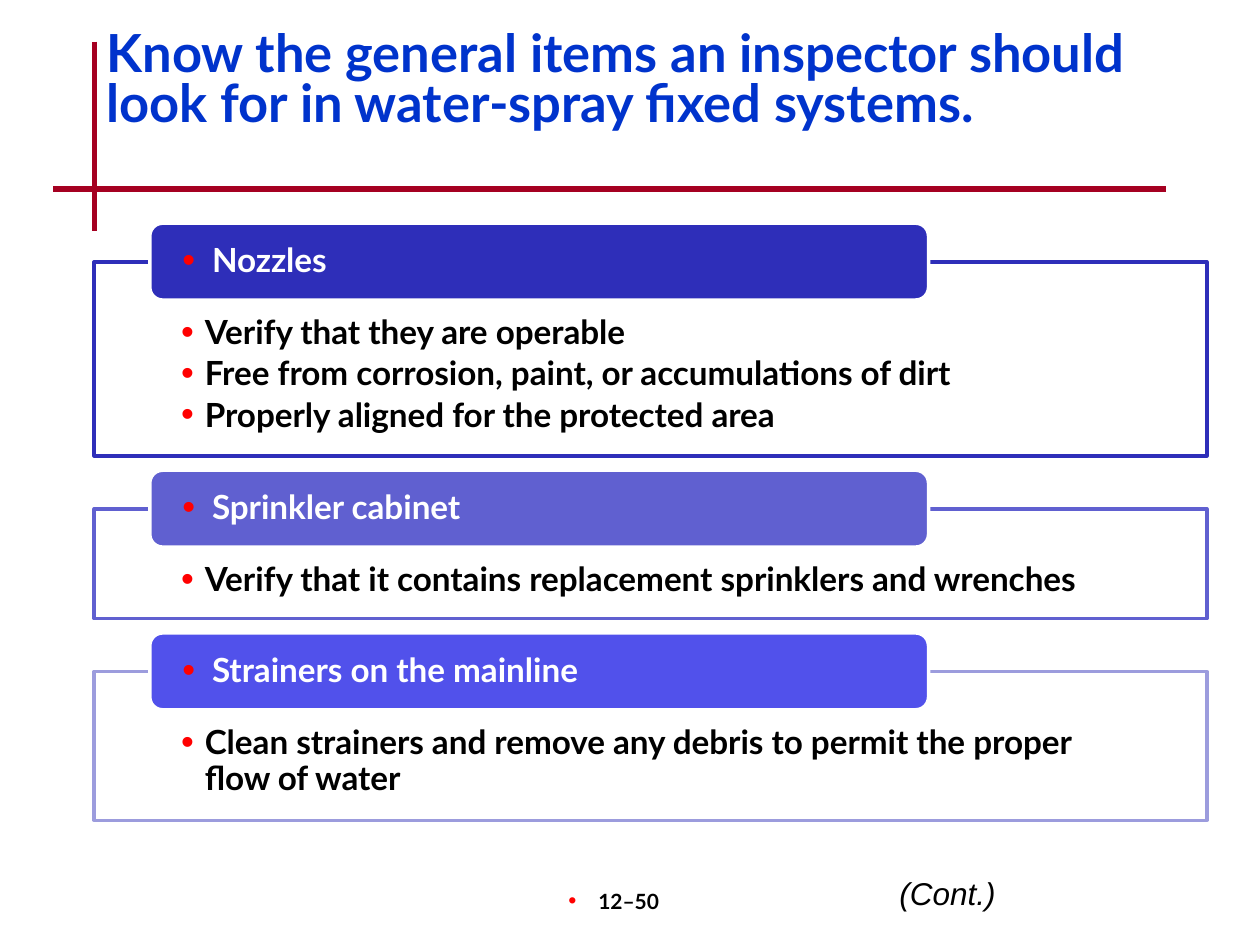
from lxml import etree
from pptx import Presentation
from pptx.dml.color import RGBColor
from pptx.enum.shapes import MSO_CONNECTOR, MSO_SHAPE
from pptx.enum.text import MSO_ANCHOR, PP_ALIGN
from pptx.oxml.ns import qn
from pptx.util import Cm, Pt

LINE = MSO_CONNECTOR.STRAIGHT
RECT, ROUNDED = MSO_SHAPE.RECTANGLE, MSO_SHAPE.ROUNDED_RECTANGLE
TOP, MIDDLE = MSO_ANCHOR.TOP, MSO_ANCHOR.MIDDLE
LEFT, CENTER, RIGHT = PP_ALIGN.LEFT, PP_ALIGN.CENTER, PP_ALIGN.RIGHT
rgb = RGBColor.from_string


def write(s, lines, size, color, margins=(0.25, 0.13, 0.25, 0.13), anchor=TOP,
          align=LEFT, spacing=None, after=None, bullet_indent=None,
          font="Lato", bold=True, italic=False):
    """Fill a shape with paragraphs; margins are left, top, right, bottom in cm."""
    tf = s.text_frame
    tf.word_wrap = True
    tf.vertical_anchor = anchor
    tf.margin_left, tf.margin_top, tf.margin_right, tf.margin_bottom = map(Cm, margins)
    tf.text = "\n".join(lines)
    for p in tf.paragraphs:
        p.alignment = align
        p.line_spacing = spacing
        p.space_after = after
        if bullet_indent:
            pPr = p._p.get_or_add_pPr()
            pPr.set("marL", str(Cm(bullet_indent)))
            pPr.set("indent", str(-Cm(bullet_indent)))
            clr = etree.SubElement(pPr, qn("a:buClr"))
            etree.SubElement(clr, qn("a:srgbClr"), val="FF0000")
            etree.SubElement(pPr, qn("a:buSzPct"), val="110000")
            etree.SubElement(pPr, qn("a:buFont"), typeface="Arial")
            etree.SubElement(pPr, qn("a:buChar"), char="•")
        for r in p.runs:
            r.font.name, r.font.size = font, Pt(size)
            r.font.bold, r.font.italic = bold, italic
            r.font.color.rgb = rgb(color)


def add_panel(shapes, kind, box, fill, line):
    s = shapes.add_shape(kind, *map(Cm, box))
    s.shadow.inherit = False
    s.fill.solid()
    s.fill.fore_color.rgb = rgb(fill)
    s.line.color.rgb = rgb(line)
    s.line.width = Pt(2)
    return s


prs = Presentation()
prs.slide_width, prs.slide_height = Cm(25.4), Cm(19.05)
shapes = prs.slides.add_slide(prs.slide_layouts[6]).shapes

# Crossed rules beside the title
for ends in ((1.9, 0.84, 1.9, 4.65), (1.07, 3.81, 23.5, 3.81)):
    rule = shapes.add_connector(LINE, *map(Cm, ends))
    rule.line.color.rgb = rgb("A50021")
    rule.line.width = Pt(3)
    etree.SubElement(rule._element.spPr, qn("a:effectLst"))

page = shapes.add_textbox(Cm(9.96), Cm(17.78), Cm(5.28), Cm(1.27))
write(page, ["12–50"], 12, "000000", margins=(0.25, 0.13, 0.7, 0.13),
      align=CENTER, bullet_indent=0.6)

title = shapes.add_textbox(Cm(1.9), Cm(0.51), Cm(21.59), Cm(2.54))
write(title, ["Know the general items an inspector should look for in "
              "water-spray fixed systems."], 30, "0033CC", spacing=0.8)

# Heading, heading fill, frame colour, frame height, items
sections = [
    ("Nozzles", "2E2EB9", "2E2EB9", 3.91,
     ["Verify that they are operable",
      "Free from corrosion, paint, or accumulations of dirt",
      "Properly aligned for the protected area"]),
    ("Sprinkler cabinet", "6060D0", "6060D0", 2.21,
     ["Verify that it contains replacement sprinklers and wrenches"]),
    ("Strainers on the mainline", "5151EB", "9C9CDD", 3.0,
     ["Clean strainers and remove any debris to permit the proper flow of water"]),
]
GAP, OVERLAP = 1.07, 0.78
top = 5.28
for heading, fill, frame_color, height, items in sections:
    frame = add_panel(shapes, RECT, (1.9, top, 22.43, height), "FFFFFF", frame_color)
    white = frame._element.spPr.find(qn("a:solidFill"))[0]
    etree.SubElement(white, qn("a:alpha"), val="90000")
    write(frame, items, 19, "000000", margins=(1.75, 1.09, 1.75, 0.38),
          spacing=0.9, after=Pt(3), bullet_indent=0.48)

    tab = add_panel(shapes, ROUNDED, (3.02, top - OVERLAP, 15.7, 1.55), fill, "FFFFFF")
    write(tab, [heading], 19, "FFFFFF", margins=(0.58, 0, 0.58, 0),
          anchor=MIDDLE, spacing=0.9, bullet_indent=0.6)
    top += height + GAP

cont = shapes.add_textbox(Cm(16.08), Cm(17.48), Cm(4.24), Cm(1.02))
write(cont, ["(Cont.)"], 18, "000000", align=RIGHT, font="Arial",
      bold=False, italic=True)

prs.save("out.pptx")
